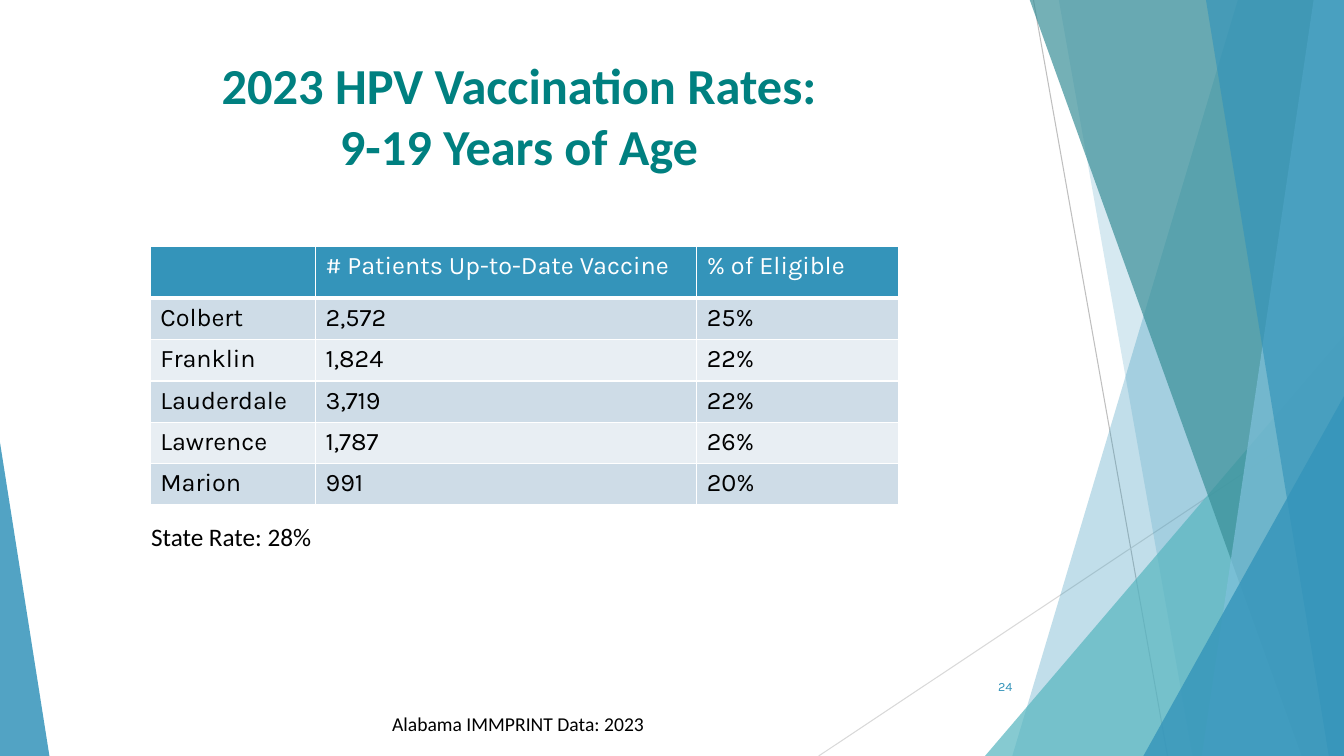
import lxml.etree
import pptx
import pptx.dml.color
import pptx.enum.shapes
import pptx.enum.text
import pptx.oxml
import pptx.oxml.ns
import pptx.util

Inches = pptx.util.Inches
Pt = pptx.util.Pt
qn = pptx.oxml.ns.qn
RGBColor = pptx.dml.color.RGBColor
PP_ALIGN = pptx.enum.text.PP_ALIGN
MSO_ANCHOR = pptx.enum.text.MSO_ANCHOR

COLORS = {
    "blue": "3494BA",
    "sky": "7FC1DB",
    "aqua": "58B6C0",
    "teal": "3A8F98",
    "title": "008080",
    "black": "000000",
    "white": "FFFFFF",
    "band_dark": "CEDCE7",
    "band_light": "E8EEF3",
    "line_dark": "BFBFBF",
    "line_light": "D9D9D9",
}


def paint(shape, color, opacity):
    shape.shadow.inherit = False
    shape.line.fill.background()
    shape.fill.solid()
    shape.fill.fore_color.rgb = RGBColor.from_string(COLORS[color])
    color_element = shape.fill._xPr.find(qn("a:solidFill"))[0]
    lxml.etree.SubElement(color_element, qn("a:alpha")).set("val", str(opacity * 1000))


def style_text(paragraph, font_name, size, color, bold=False):
    for run in paragraph.runs:
        run.font.name = font_name
        run.font.size = Pt(size)
        run.font.bold = bold
        run.font.color.rgb = RGBColor.from_string(COLORS[color])


presentation = pptx.Presentation()
presentation.slide_width = Inches(13.33)
presentation.slide_height = Inches(7.5)
slide = presentation.slides.add_slide(presentation.slide_layouts[6])

thin_lines = [
    (10.25, 0, 11.58, 7.5, "line_dark"),
    (13.33, 4.03, 8.12, 7.5, "line_light"),
]
for x1, y1, x2, y2, color in thin_lines:
    connector = slide.shapes.add_connector(
        pptx.enum.shapes.MSO_CONNECTOR.STRAIGHT,
        Inches(x1), Inches(y1), Inches(x2), Inches(y2))
    connector.line.width = Pt(0.75)
    connector.line.color.rgb = RGBColor.from_string(COLORS[color])
    lxml.etree.SubElement(connector._element.spPr, qn("a:effectLst"))

facets = [
    ("band", 12.28, 10.04, "blue", 30),
    ("band", 10.5, 11.83, "blue", 20),
    ("triangle", (9.77, 3.33, 3.56, 4.17), 1, "aqua", 72),
    ("band", 10.21, 12.91, "teal", 70),
    ("band", 13.03, 11.92, "sky", 70),
    ("band", 11.96, 13.18, "blue", 65),
    ("triangle", (11.34, 3.93, 1.99, 3.57), 1, "blue", 80),
    ("triangle", (0, 4.39, 0.49, 3.11), 0, "blue", 85),
]
for kind, first, second, color, opacity in facets:
    if kind == "band":
        builder = slide.shapes.build_freeform(Inches(first), Inches(-0.01))
        corners = [(13.33, -0.01), (13.33, 7.5), (second, 7.5)]
        builder.add_line_segments([(Inches(x), Inches(y)) for x, y in corners], close=True)
        shape = builder.convert_to_shape()
    else:
        shape = slide.shapes.add_shape(
            pptx.enum.shapes.MSO_SHAPE.ISOSCELES_TRIANGLE,
            *[Inches(length) for length in first])
        shape.adjustments[0] = second
    paint(shape, color, opacity)

rows = [
    ("", "# Patients Up-to-Date Vaccine", "% of Eligible"),
    ("Colbert", "2,572", "25%"),
    ("Franklin", "1,824", "22%"),
    ("Lauderdale", "3,719", "22%"),
    ("Lawrence", "1,787", "26%"),
    ("Marion", "991", "20%"),
]
column_widths = [1.64, 3.78, 2]
table = slide.shapes.add_table(
    len(rows), len(column_widths),
    Inches(1.49), Inches(2.44), Inches(7.42), Inches(2.57)).table
for column, width in zip(table.columns, column_widths):
    column.width = Inches(width)
for row_index, values in enumerate(rows):
    header = row_index == 0
    table.rows[row_index].height = Inches(0.52 if header else 0.41)
    band = "blue" if header else "band_dark" if row_index % 2 else "band_light"
    for column_index, value in enumerate(values):
        cell = table.cell(row_index, column_index)
        cell.text_frame.text = value
        style_text(cell.text_frame.paragraphs[0], "Karla", 18, "white" if header else "black")
        properties = cell._tc.get_or_add_tcPr()
        for side in ("lnL", "lnR", "lnT", "lnB"):
            border = lxml.etree.SubElement(properties, qn("a:" + side))
            border.set("w", str(Pt(3 if header and side == "lnB" else 1)))
            fill = lxml.etree.SubElement(border, qn("a:solidFill"))
            lxml.etree.SubElement(fill, qn("a:srgbClr")).set("val", COLORS["white"])
        cell.fill.solid()
        cell.fill.fore_color.rgb = RGBColor.from_string(COLORS[band])

texts = [
    ("2023 HPV Vaccination Rates:\v9-19 Years of Age", (0, 0.49, 10.3, 1.44),
     "Calibri", 36, "title", True, PP_ALIGN.CENTER, MSO_ANCHOR.TOP),
    ("24", (9.39, 6.61, 0.75, 0.4),
     "Karla", 9, "blue", False, PP_ALIGN.RIGHT, MSO_ANCHOR.MIDDLE),
    ("State Rate: 28%", (1.4, 5.12, 1.92, 0.4),
     "Calibri", 18, "black", False, PP_ALIGN.LEFT, MSO_ANCHOR.TOP),
    ("Alabama IMMPRINT Data: 2023", (3.79, 7.01, 6.63, 0.34),
     "Calibri", 14, "black", False, PP_ALIGN.LEFT, MSO_ANCHOR.TOP),
]
for text, box, font_name, size, color, bold, alignment, anchor in texts:
    text_frame = slide.shapes.add_textbox(*[Inches(length) for length in box]).text_frame
    text_frame.word_wrap = True
    text_frame.vertical_anchor = anchor
    paragraph = text_frame.paragraphs[0]
    paragraph.text = text
    paragraph.alignment = alignment
    style_text(paragraph, font_name, size, color, bold)

presentation.save("out.pptx")
